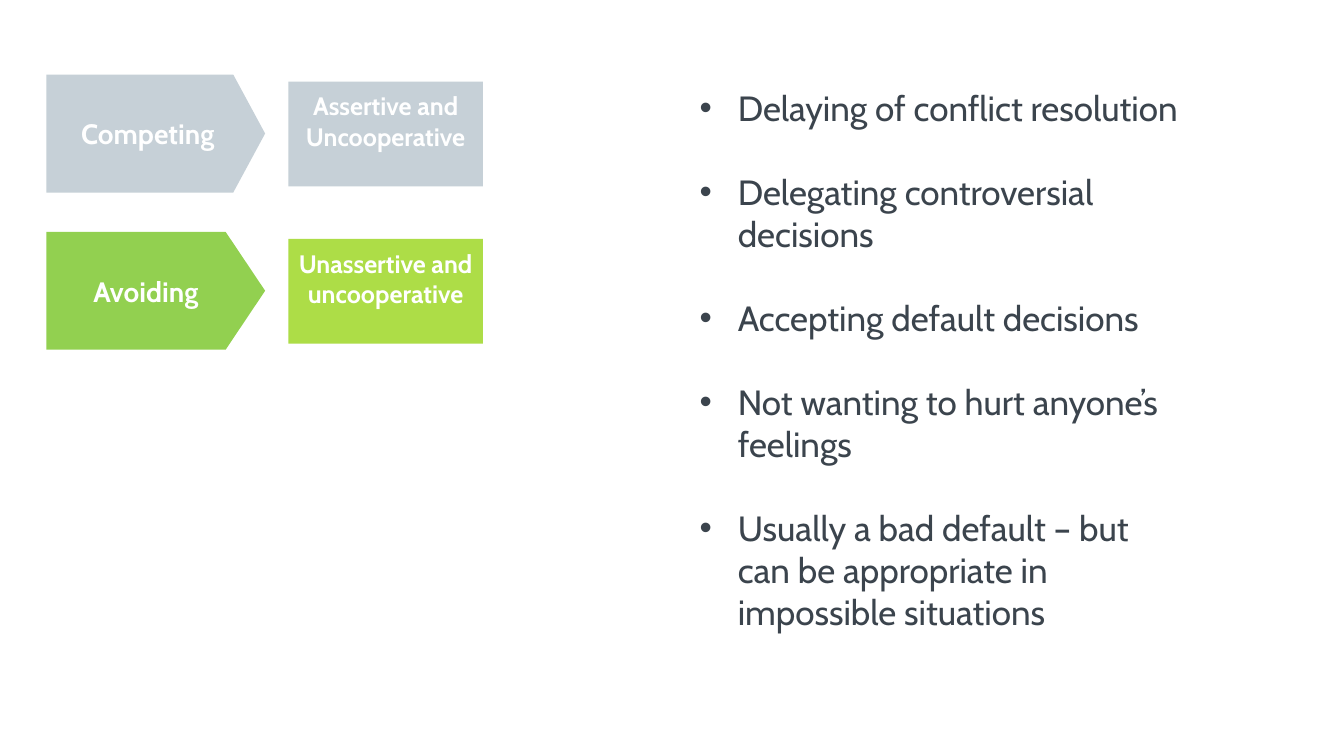
from lxml import etree
from pptx import Presentation
from pptx.dml.color import RGBColor
from pptx.enum.shapes import MSO_SHAPE
from pptx.enum.text import MSO_ANCHOR, PP_ALIGN
from pptx.oxml.ns import qn
from pptx.util import Inches, Pt

PENTAGON, RECTANGLE = MSO_SHAPE.PENTAGON, MSO_SHAPE.RECTANGLE
MIDDLE, TOP = MSO_ANCHOR.MIDDLE, MSO_ANCHOR.TOP
CENTER = PP_ALIGN.CENTER

FONT = "Cabin"
WHITE = RGBColor(0xFF, 0xFF, 0xFF)
SLATE = RGBColor(0x3B, 0x44, 0x4D)
GREY = RGBColor(0xC6, 0xD0, 0xD7)
GREEN = RGBColor(0x92, 0xD0, 0x50)
LIME = RGBColor(0xAD, 0xDD, 0x47)

STYLES = [
    ("Competing", GREY, 0.27, "Assertive and Uncooperative", GREY),
    ("Avoiding", GREEN, 0.335, "Unassertive and uncooperative", LIME),
]
FIRST_TOP, ROW_PITCH = 0.74, 1.56

AVOIDING_TRAITS = [
    "Delaying of conflict resolution",
    "Delegating controversial decisions",
    "Accepting default decisions",
    "Not wanting to hurt anyone’s feelings",
    "Usually a bad default – but can be appropriate in impossible situations",
]


def set_font(paragraph, size, color, bold=False):
    font = paragraph.font
    font.name, font.size, font.bold = FONT, Pt(size), bold
    font.color.rgb = color


def add_label(kind, left, top, width, height, fill, text, size, anchor):
    """Add a filled shape with centred bold white text."""
    label = slide.shapes.add_shape(
        kind, Inches(left), Inches(top), Inches(width), Inches(height))
    label.shadow.inherit = False
    label.fill.solid()
    label.fill.fore_color.rgb = fill
    label.line.fill.background()
    frame = label.text_frame
    frame.word_wrap = True
    frame.vertical_anchor = anchor
    paragraph = frame.paragraphs[0]
    paragraph.text = text
    paragraph.alignment = CENTER
    set_font(paragraph, size, WHITE, bold=True)
    return label


prs = Presentation()
prs.slide_width, prs.slide_height = Inches(13.33), Inches(7.5)
slide = prs.slides.add_slide(prs.slide_layouts[6])

for row, (style, style_fill, point, meaning, meaning_fill) in enumerate(STYLES):
    top = FIRST_TOP + row * ROW_PITCH
    arrow = add_label(PENTAGON, 0.46, top, 2.17, 1.17, style_fill, style, 20, MIDDLE)
    arrow.adjustments[0] = point
    box = add_label(RECTANGLE, 2.86, top + 0.07, 1.93, 1.04, meaning_fill, meaning, 18, TOP)
    box.text_frame.margin_top = Inches(0.09)

traits = slide.shapes.add_textbox(Inches(6.84), Inches(0.81), Inches(4.97), Inches(5.6))
frame = traits.text_frame
frame.word_wrap = True
for index, trait in enumerate(AVOIDING_TRAITS):
    paragraph = frame.add_paragraph() if index else frame.paragraphs[0]
    paragraph.text = trait
    paragraph.space_before = Pt(30 if index else 0)
    set_font(paragraph, 25, SLATE)
    properties = paragraph._p.get_or_add_pPr()
    properties.set("marL", str(Inches(0.38)))
    properties.set("indent", str(Inches(-0.38)))
    bullet_font = etree.Element(qn("a:buFont"), typeface="Arial")
    bullet = etree.Element(qn("a:buChar"), char="•")
    properties.find(qn("a:defRPr")).addprevious(bullet_font)
    bullet_font.addnext(bullet)

prs.save("out.pptx")
